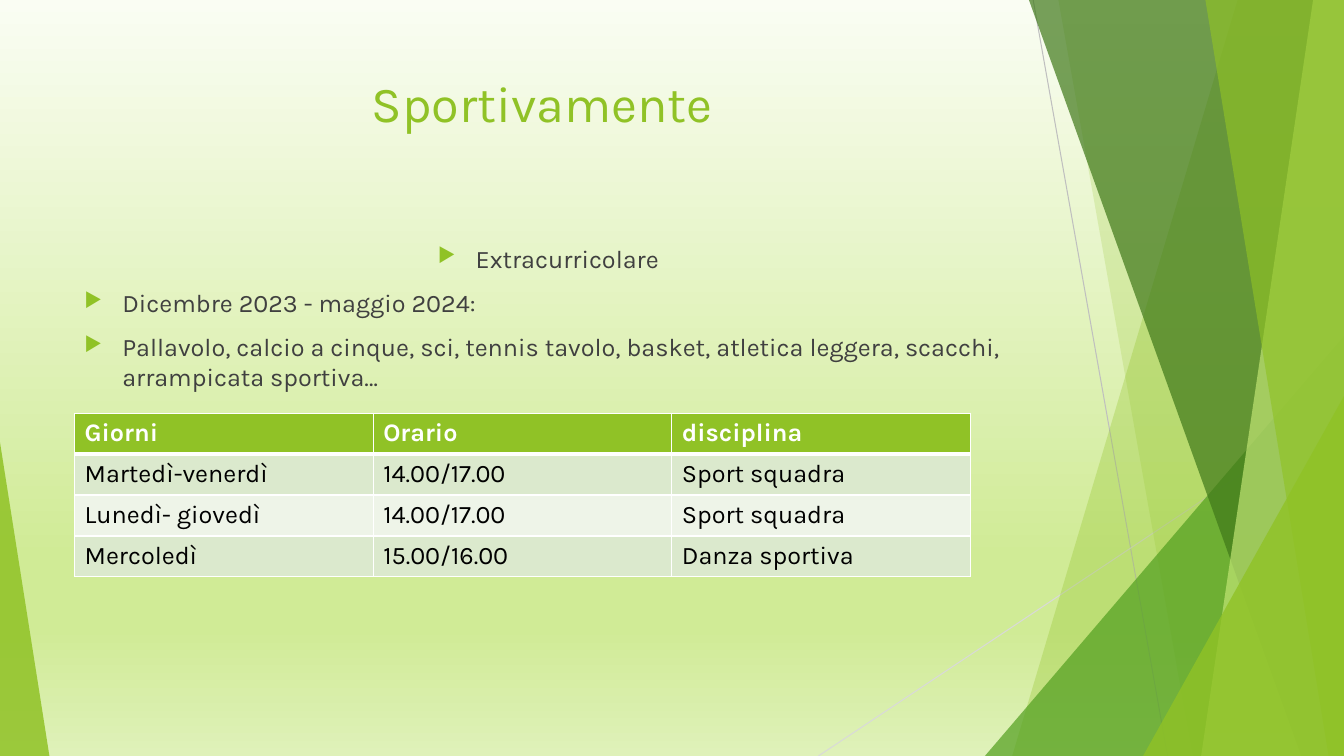
"""Build the Sportivamente slide about extracurricular sport."""
from dataclasses import dataclass

from pptx import Presentation
from pptx import util as u
from pptx.dml.color import RGBColor
from pptx.enum import shapes, text
from pptx.oxml import ns, xmlchemy


@dataclass(frozen=True)
class Theme:
    font: str = "Karla"
    title_size: int = 36
    body_size: int = 18
    green: str = "90C226"
    leaf: str = "54A021"
    forest: str = "3F7819"
    lime: str = "C0E474"
    ink: str = "404040"
    black: str = "000000"
    white: str = "FFFFFF"
    line_dark: str = "BFBFBF"
    line_light: str = "D9D9D9"
    bands: tuple = ("DBE9CD", "EEF4E8")
    background: tuple = ((0, "FAFDF3"), (74, "D0EB96"), (83, "D0EB96"), (100, "DFF1B9"))


def add_child(parent, tag, **attributes):
    child = xmlchemy.OxmlElement(tag)
    for name, value in attributes.items():
        child.set(name, str(value))
    parent.append(child)
    return child


class SlideBuilder:
    def __init__(self, presentation, theme):
        self.theme = theme
        self.slide = presentation.slides.add_slide(presentation.slide_layouts[5])

    def background(self):
        fill = self.slide.background.fill
        fill.gradient()
        fill.gradient_angle = 270
        stops = next(self.slide.element.iter(ns.qn("a:gsLst")))
        for stop in list(stops):
            stops.remove(stop)
        for position, color in self.theme.background:
            stop = add_child(stops, "a:gs", pos=position * 1000)
            add_child(stop, "a:srgbClr", val=color)

    def line(self, start, end, color):
        points = [u.Pt(value) for value in (*start, *end)]
        connector = self.slide.shapes.add_connector(shapes.MSO_CONNECTOR.STRAIGHT, *points)
        connector.line.color.rgb = RGBColor.from_string(color)
        connector.line.width = u.Pt(0.75)
        add_child(connector.element.spPr, "a:effectLst")

    def paint(self, shape, color, opacity):
        shape.shadow.inherit = False
        shape.line.fill.background()
        shape.fill.solid()
        shape.fill.fore_color.rgb = RGBColor.from_string(color)
        color_element = next(shape.element.spPr.iter(ns.qn("a:srgbClr")))
        add_child(color_element, "a:alpha", val=opacity * 1000)

    def panel(self, top_x, bottom_x, color, opacity):
        corners = [(960, 0), (960, 540), (bottom_x, 540)]
        builder = self.slide.shapes.build_freeform(u.Pt(top_x), 0)
        builder.add_line_segments([(u.Pt(x), u.Pt(y)) for x, y in corners])
        self.paint(builder.convert_to_shape(), color, opacity)

    def triangle(self, left, top, width, apex, color, opacity):
        box = [u.Pt(value) for value in (left, top, width, 540 - top)]
        shape = self.slide.shapes.add_shape(shapes.MSO_SHAPE.ISOSCELES_TRIANGLE, *box)
        shape.adjustments[0] = apex
        self.paint(shape, color, opacity)

    def format_runs(self, paragraph, size, color, bold=False):
        for run in paragraph.runs:
            run.font.name = self.theme.font
            run.font.size = u.Pt(size)
            run.font.bold = bold
            run.font.color.rgb = RGBColor.from_string(color)

    def title(self, wording, left, top, width, height):
        title = self.slide.shapes.title
        title.left, title.top = u.Pt(left), u.Pt(top)
        title.width, title.height = u.Pt(width), u.Pt(height)
        frame = title.text_frame
        frame.text = wording
        frame.vertical_anchor = text.MSO_ANCHOR.TOP
        frame.paragraphs[0].alignment = text.PP_ALIGN.CENTER
        self.format_runs(frame.paragraphs[0], self.theme.title_size, self.theme.green)

    def bullets(self, items, left, top, width, height):
        box = [u.Pt(value) for value in (left, top, width, height)]
        frame = self.slide.shapes.add_textbox(*box).text_frame
        frame.word_wrap = True
        frame.text = "\n".join(wording for wording, _ in items)
        for paragraph, (_, alignment) in zip(frame.paragraphs, items):
            paragraph.alignment = alignment
            paragraph.space_before = u.Pt(10)
            properties = paragraph._p.get_or_add_pPr()
            properties.set("marL", str(u.Pt(27)))
            properties.set("indent", str(u.Pt(-27)))
            bullet_color = add_child(properties, "a:buClr")
            add_child(bullet_color, "a:srgbClr", val=self.theme.green)
            add_child(properties, "a:buSzPct", val=80000)
            add_child(properties, "a:buChar", char="▶")
            self.format_runs(paragraph, self.theme.body_size, self.theme.ink)

    def cell_borders(self, cell, row):
        properties = cell._tc.get_or_add_tcPr()
        widths = {"L": 1, "R": 1, "T": 3 if row == 1 else 1, "B": 3 if row == 0 else 1}
        for index, (side, width) in enumerate(widths.items()):
            border = add_child(properties, f"a:ln{side}", w=u.Pt(width))
            fill = add_child(border, "a:solidFill")
            add_child(fill, "a:srgbClr", val=self.theme.white)
            properties.insert(index, border)

    def table(self, rows, left, top, width, row_height):
        box = [u.Pt(value) for value in (left, top, width, row_height * len(rows))]
        table = self.slide.shapes.add_table(len(rows), len(rows[0]), *box).table
        for row, values in enumerate(rows):
            header = row == 0
            fill = self.theme.green if header else self.theme.bands[(row - 1) % 2]
            color = self.theme.white if header else self.theme.black
            for column, value in enumerate(values):
                cell = table.cell(row, column)
                cell.text = value
                cell.fill.solid()
                cell.fill.fore_color.rgb = RGBColor.from_string(fill)
                self.format_runs(cell.text_frame.paragraphs[0], self.theme.body_size, color, header)
                self.cell_borders(cell, row)


def main():
    theme = Theme()
    presentation = Presentation()
    presentation.slide_width, presentation.slide_height = u.Pt(960), u.Pt(540)
    builder = SlideBuilder(presentation, theme)
    builder.background()

    builder.line((738, 0), (834, 540), theme.line_dark)
    builder.line((960, 290), (584.6, 540), theme.line_light)
    builder.panel(884, 723, theme.green, 30)
    builder.panel(756, 852, theme.green, 20)
    builder.triangle(703.5, 240, 256.5, 1, theme.leaf, 72)
    builder.panel(735, 929.5, theme.forest, 70)
    builder.panel(938, 858, theme.lime, 70)
    builder.panel(861, 949, theme.green, 65)
    builder.triangle(816.5, 283, 143.5, 1, theme.green, 80)
    builder.triangle(0, 316, 35.3, 0, theme.green, 85)

    builder.title("Sportivamente ", 53.3, 48, 676.8, 104)
    items = [
        ("Extracurricolare", text.PP_ALIGN.CENTER),
        ("Dicembre 2023 - maggio 2024:", text.PP_ALIGN.LEFT),
        ("Pallavolo, calcio a cinque, sci, tennis tavolo, basket, atletica leggera, "
         "scacchi, arrampicata sportiva…", text.PP_ALIGN.LEFT),
    ]
    builder.bullets(items, 53.3, 170, 676.8, 305)
    rows = [
        ("Giorni", "Orario", "disciplina"),
        ("Martedì-venerdì", "14.00/17.00", "Sport squadra"),
        ("Lunedì- giovedì", "14.00/17.00", "Sport squadra"),
        ("Mercoledì", "15.00/16.00", "Danza sportiva"),
    ]
    builder.table(rows, 53.3, 295.2, 640, 29.2)
    presentation.save("out.pptx")


if __name__ == "__main__":
    main()
